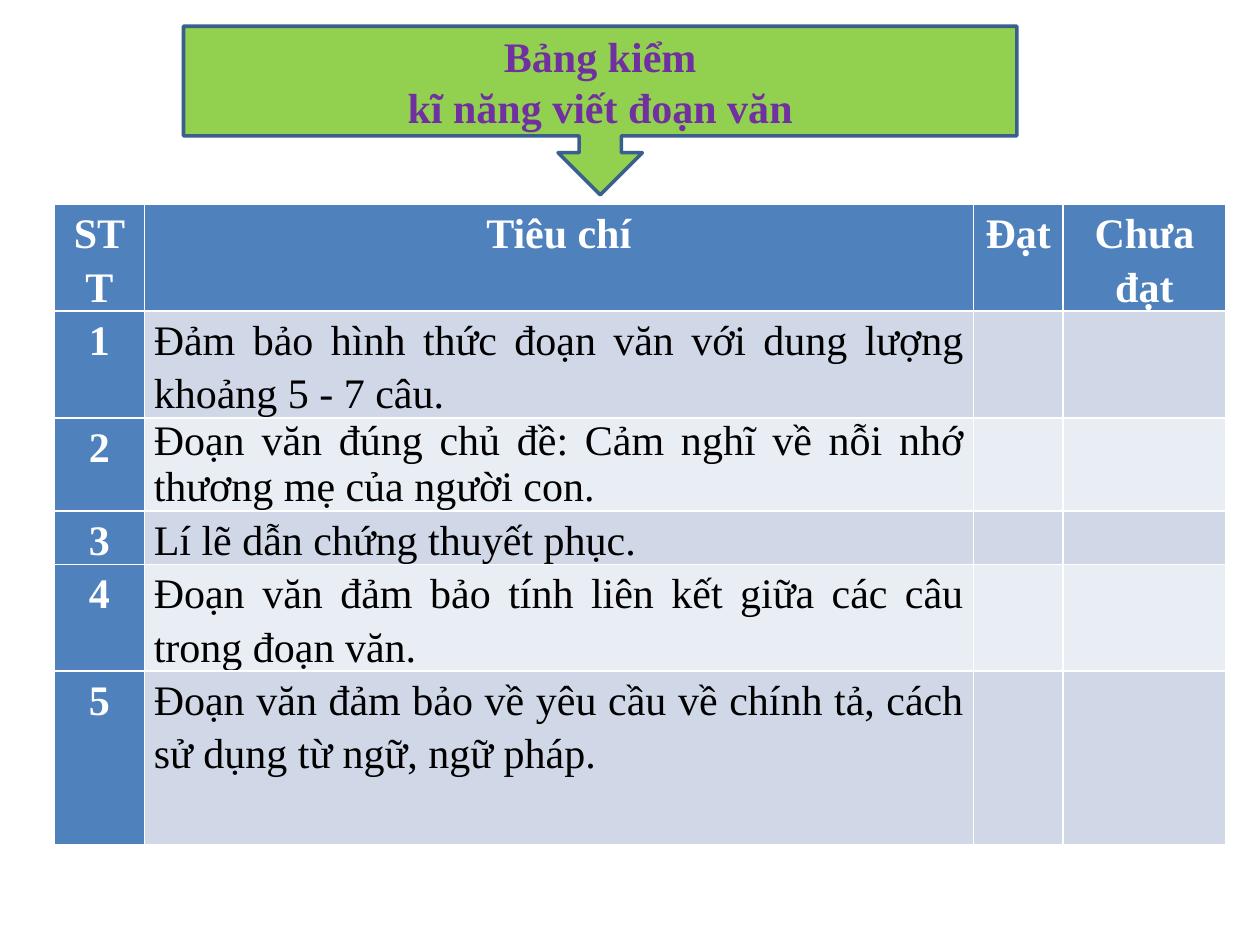
from pptx import Presentation
from pptx.dml.color import RGBColor
from pptx.enum.shapes import MSO_SHAPE
from pptx.enum.text import MSO_ANCHOR, PP_ALIGN
from pptx.util import Cm, Pt

COLORS = {
    "callout": "92D050", "edge": "3A5F8C", "title": "7030A0",
    "head": "4F81BD", "odd": "D0D8E8", "even": "E9EDF4",
    "white": "FFFFFF", "black": "000000",
}
FONT = {"name": "Times New Roman", "size": Pt(24)}
INSET = {"margin_left": Cm(0.19), "margin_right": Cm(0.19),
         "margin_top": 0, "margin_bottom": 0}
LOOSE = {"line_spacing": 1.15, "space_after": Pt(12)}
TIGHT = {"space_after": Pt(6)}


def apply(item, form):
    for key, value in form.items():
        setattr(item, key, value)


def write(para, text, color, bold, form):
    run = para.add_run()
    run.text = text
    apply(para, form)
    apply(run.font, {**FONT, "bold": bold})
    run.font.color.rgb = RGBColor.from_string(COLORS[color])


deck = Presentation()
apply(deck, {"slide_width": Cm(25.4), "slide_height": Cm(19.05)})
slide = deck.slides.add_slide(deck.slide_layouts[6])

# Title callout
box = slide.shapes.add_shape(MSO_SHAPE.DOWN_ARROW_CALLOUT,
                             Cm(3.7), Cm(0.53), Cm(16.8), Cm(3.4))
box.shadow.inherit = False
box.fill.solid()
box.fill.fore_color.rgb = RGBColor.from_string(COLORS["callout"])
box.line.color.rgb = RGBColor.from_string(COLORS["edge"])
box.line.width = Pt(2)
frame = box.text_frame
apply(frame, {"word_wrap": True, "vertical_anchor": MSO_ANCHOR.MIDDLE})
center = {"alignment": PP_ALIGN.CENTER}
write(frame.paragraphs[0], "Bảng kiểm", "title", True, center)
write(frame.add_paragraph(), "kĩ năng viết đoạn văn", "title", True, center)

# Checklist: text and paragraph spacing of each criterion
heads = ["STT", "Tiêu chí", "Đạt", "Chưa đạt"]
items = [
    ("Đảm bảo hình thức đoạn văn với dung lượng khoảng 5 - 7 câu.", LOOSE),
    ("Đoạn văn đúng chủ đề: Cảm nghĩ về nỗi nhớ thương mẹ của người con.", TIGHT),
    ("Lí lẽ dẫn chứng thuyết phục.", LOOSE),
    ("Đoạn văn đảm bảo tính liên kết giữa các câu trong đoạn văn.", LOOSE),
    ("Đoạn văn đảm bảo về yêu cầu về chính tả, cách sử dụng từ ngữ, ngữ pháp.", LOOSE),
]
widths = [1.81, 16.71, 1.81, 3.28]
heights = [1.48, 1.48, 1.32, 0.7, 1.48, 3.5]
table = slide.shapes.add_table(len(heights), len(widths), Cm(1.1), Cm(4.12),
                               Cm(sum(widths)), Cm(sum(heights))).table
table.first_col = True
for col, width in zip(table.columns, widths):
    col.width = Cm(width)
for row, height in zip(table.rows, heights):
    row.height = Cm(height)

# Cell fills and text
rows = [heads] + [[str(num), text, "", ""]
                  for num, (text, gap) in enumerate(items, 1)]
for r, row in enumerate(rows):
    for c, text in enumerate(row):
        cell = table.cell(r, c)
        label = r == 0 or c == 0
        tint = "head" if label else "odd" if r % 2 else "even"
        cell.fill.solid()
        cell.fill.fore_color.rgb = RGBColor.from_string(COLORS[tint])
        if not text:
            continue
        apply(cell, INSET)
        gap = LOOSE if label else items[r - 1][1]
        align = PP_ALIGN.CENTER if label else PP_ALIGN.JUSTIFY
        write(cell.text_frame.paragraphs[0], text,
              "white" if label else "black", label,
              {**gap, "alignment": align})

deck.save("out.pptx")
